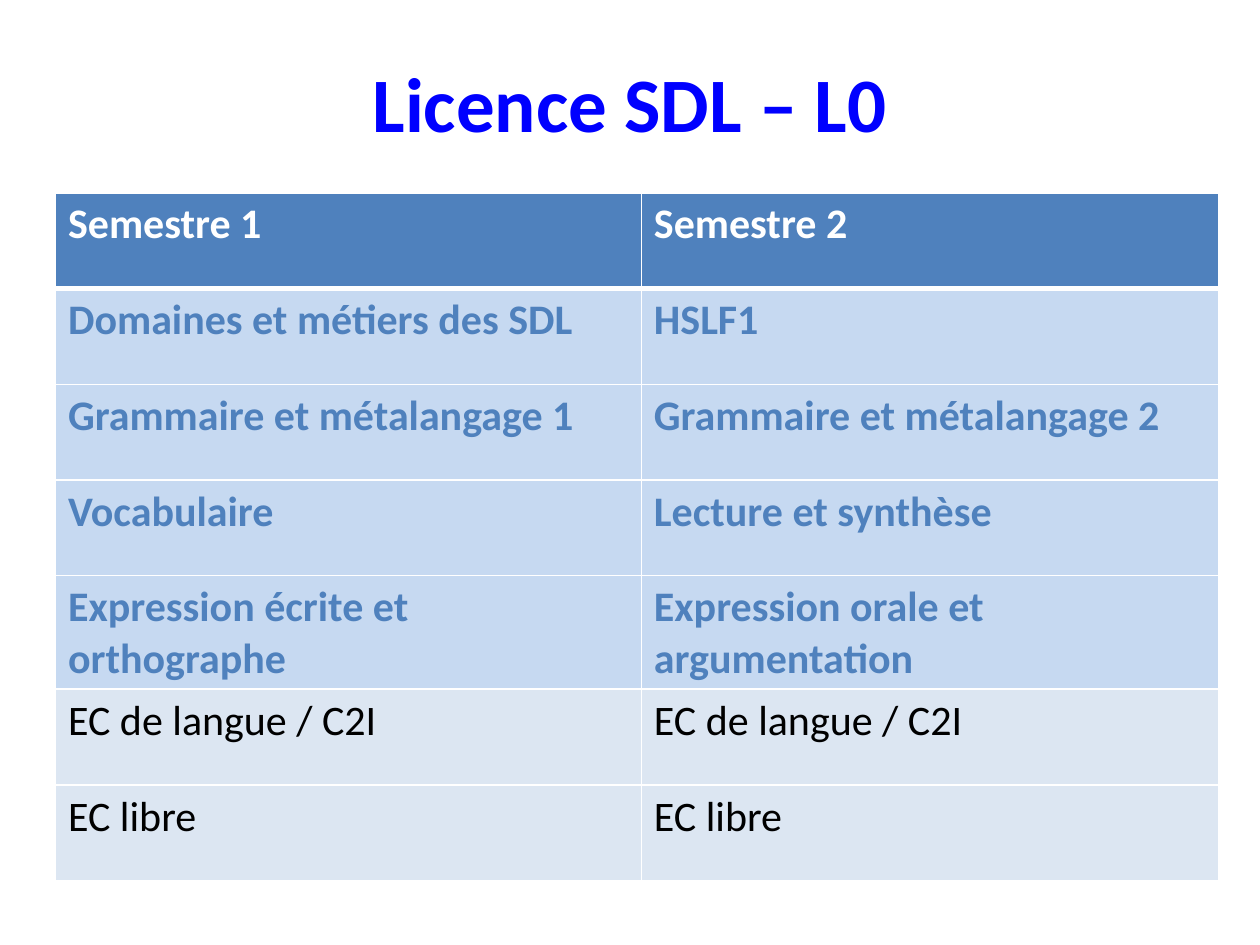
import lxml.etree
import pptx
import pptx.dml.color
import pptx.enum.text
import pptx.oxml.ns
import pptx.util

Inches, Pt = pptx.util.Inches, pptx.util.Pt

TITLE = "Licence SDL – L0"
# (row kind, semester 1, semester 2)
ROWS = [
    ("header", "Semestre 1", "Semestre 2"),
    ("core", "Domaines et métiers des SDL", "HSLF1"),
    ("core", "Grammaire et métalangage 1", "Grammaire et métalangage 2"),
    ("core", "Vocabulaire", "Lecture et synthèse"),
    ("core", "Expression écrite et orthographe", "Expression orale et argumentation"),
    ("option", "EC de langue / C2I", "EC de langue / C2I"),
    ("option", "EC libre", "EC libre"),
]
COLUMN_WIDTHS = [4.65, 4.58]
ROW_HEIGHT = 0.76

THEME = {
    "font": "Calibri",
    "title": {"size": 44, "color": "0000FF", "bold": True},
    "header": {"size": 24, "color": "FFFFFF", "bold": True, "fill": "4F81BD"},
    "core": {"size": 24, "color": "4F81BD", "bold": True, "fill": "C6D9F1"},
    "option": {"size": 24, "color": "000000", "bold": False, "fill": "DCE6F2"},
    "border": "FFFFFF",
    "thin": 1,
    "thick": 3,
}


def rgb(value):
    return pptx.dml.color.RGBColor.from_string(value)


def write(tf, text, style):
    tf.text = text
    font = tf.paragraphs[0].runs[0].font
    font.name = THEME["font"]
    font.size = Pt(style["size"])
    font.bold = style["bold"]
    font.color.rgb = rgb(style["color"])


def set_borders(cell, top, bottom):
    """Draw all four sides; the lines must come before the fill in tcPr."""
    tc_pr = cell._tc.get_or_add_tcPr()
    widths = {"L": THEME["thin"], "R": THEME["thin"], "T": top, "B": bottom}
    for i, (side, width) in enumerate(widths.items()):
        ln = lxml.etree.Element(pptx.oxml.ns.qn(f"a:ln{side}"), w=str(Pt(width)))
        fill = lxml.etree.SubElement(ln, pptx.oxml.ns.qn("a:solidFill"))
        lxml.etree.SubElement(fill, pptx.oxml.ns.qn("a:srgbClr"), val=THEME["border"])
        tc_pr.insert(i, ln)


def add_title(slide):
    box = slide.shapes.add_textbox(Inches(0.5), Inches(0.3), Inches(9), Inches(1.01))
    tf = box.text_frame
    tf.word_wrap = True
    tf.vertical_anchor = pptx.enum.text.MSO_ANCHOR.MIDDLE
    write(tf, TITLE, THEME["title"])
    tf.paragraphs[0].alignment = pptx.enum.text.PP_ALIGN.CENTER


def add_course_table(slide):
    table = slide.shapes.add_table(
        len(ROWS), len(COLUMN_WIDTHS), Inches(0.44), Inches(1.53),
        Inches(sum(COLUMN_WIDTHS)), Inches(ROW_HEIGHT * len(ROWS))).table
    table.horz_banding = False
    for column, width in zip(table.columns, COLUMN_WIDTHS):
        column.width = Inches(width)
    for i, (kind, *courses) in enumerate(ROWS):
        table.rows[i].height = Inches(ROW_HEIGHT)
        top = THEME["thick" if i == 1 else "thin"]
        bottom = THEME["thick" if i == 0 else "thin"]
        for j, course in enumerate(courses):
            cell = table.cell(i, j)
            write(cell.text_frame, course, THEME[kind])
            cell.fill.solid()
            cell.fill.fore_color.rgb = rgb(THEME[kind]["fill"])
            set_borders(cell, top, bottom)


def main():
    prs = pptx.Presentation()
    prs.slide_width, prs.slide_height = Inches(10), Inches(7.5)
    slide = prs.slides.add_slide(prs.slide_layouts[6])
    add_title(slide)
    add_course_table(slide)
    prs.save("out.pptx")


if __name__ == "__main__":
    main()
